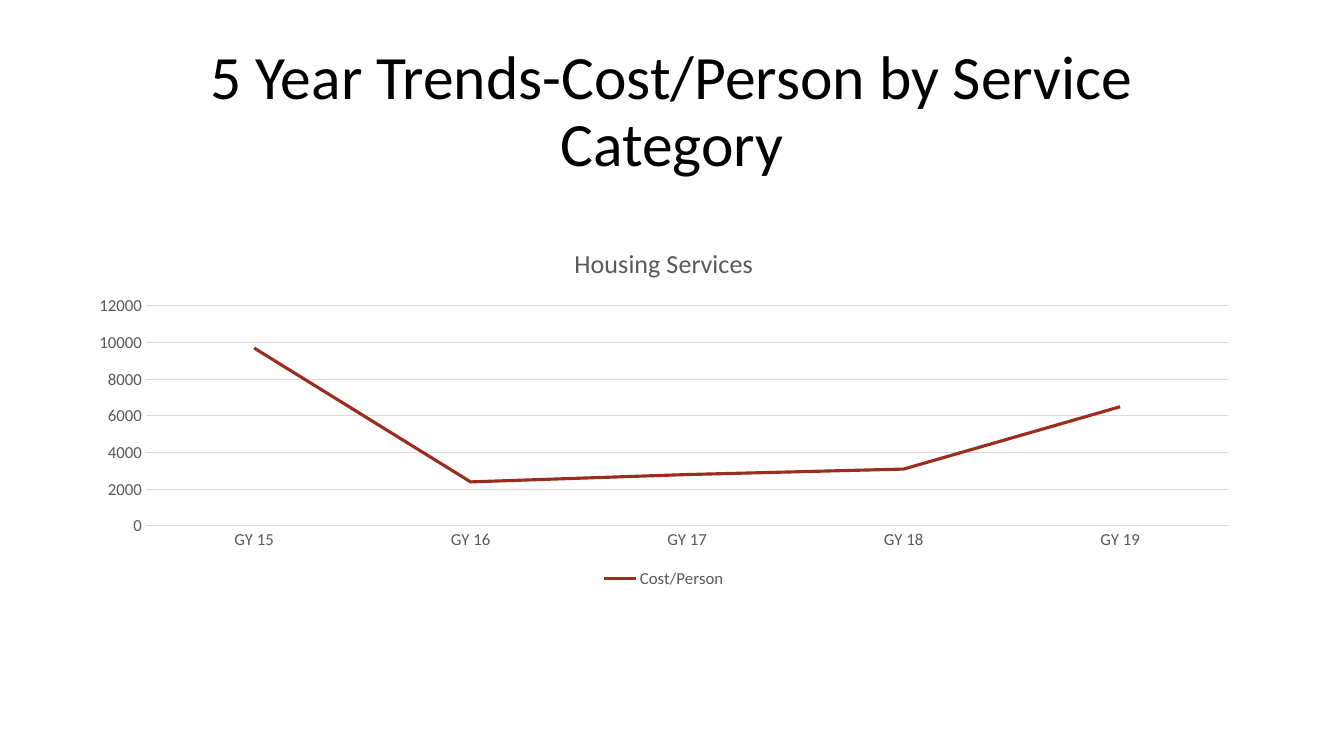
import pptx
import pptx.util
import pptx.chart.data
import pptx.dml.color
import pptx.enum.chart
import pptx.enum.text

Cm = pptx.util.Cm
Pt = pptx.util.Pt
BLACK = pptx.dml.color.RGBColor(0x00, 0x00, 0x00)
GRAY = pptx.dml.color.RGBColor(0x59, 0x59, 0x59)
GRID = pptx.dml.color.RGBColor(0xD9, 0xD9, 0xD9)
RUST = pptx.dml.color.RGBColor(0x9B, 0x2D, 0x1F)
FONT = "Calibri"


def set_font(font, size, color):
    font.name = FONT
    font.size = Pt(size)
    font.bold = False
    font.color.rgb = color


def set_line(line, width, color):
    line.width = Pt(width)
    line.color.rgb = color


prs = pptx.Presentation()
prs.slide_width = Cm(33.87)
prs.slide_height = Cm(19.05)
s = prs.slides.add_slide(prs.slide_layouts[6])

sp = s.shapes.add_textbox(Cm(2.33), Cm(1.01), Cm(29.21), Cm(3.68))
tf = sp.text_frame
tf.word_wrap = True
tf.vertical_anchor = pptx.enum.text.MSO_ANCHOR.MIDDLE
tf.text = "5 Year Trends-Cost/Person by Service Category"
p = tf.paragraphs[0]
p.alignment = pptx.enum.text.PP_ALIGN.CENTER
p.line_spacing = 0.9
set_font(p.runs[0].font, 44, BLACK)

data = pptx.chart.data.CategoryChartData()
data.categories = [f"GY {year}" for year in range(15, 20)]
data.add_series("Cost/Person", (9700, 2400, 2800, 3100, 6500))
chart = s.shapes.add_chart(
    pptx.enum.chart.XL_CHART_TYPE.LINE,
    Cm(1.91), Cm(5.74), Cm(29.64), Cm(9.19), data,
).chart
set_font(chart.font, 12, GRAY)

chart.has_title = True
tf = chart.chart_title.text_frame
tf.text = "Housing Services"
set_font(tf.paragraphs[0].runs[0].font, 18.6, GRAY)
chart.chart_title.include_in_layout = False

chart.has_legend = True
chart.legend.position = pptx.enum.chart.XL_LEGEND_POSITION.BOTTOM
chart.legend.include_in_layout = False
set_font(chart.legend.font, 12, GRAY)

for axis in (chart.category_axis, chart.value_axis):
    axis.major_tick_mark = pptx.enum.chart.XL_TICK_MARK.NONE
    axis.minor_tick_mark = pptx.enum.chart.XL_TICK_MARK.NONE
    set_font(axis.tick_labels.font, 12, GRAY)

set_line(chart.category_axis.format.line, 0.75, GRID)
axis = chart.value_axis
axis.minimum_scale = 0
axis.maximum_scale = 12000
axis.major_unit = 2000
axis.format.line.fill.background()
axis.has_major_gridlines = True
set_line(axis.major_gridlines.format.line, 0.75, GRID)

plot = chart.plots[0]
plot.vary_by_categories = False
series = plot.series[0]
series.smooth = False
series.marker.style = pptx.enum.chart.XL_MARKER_STYLE.NONE
set_line(series.format.line, 2.25, RUST)

prs.save("out.pptx")
